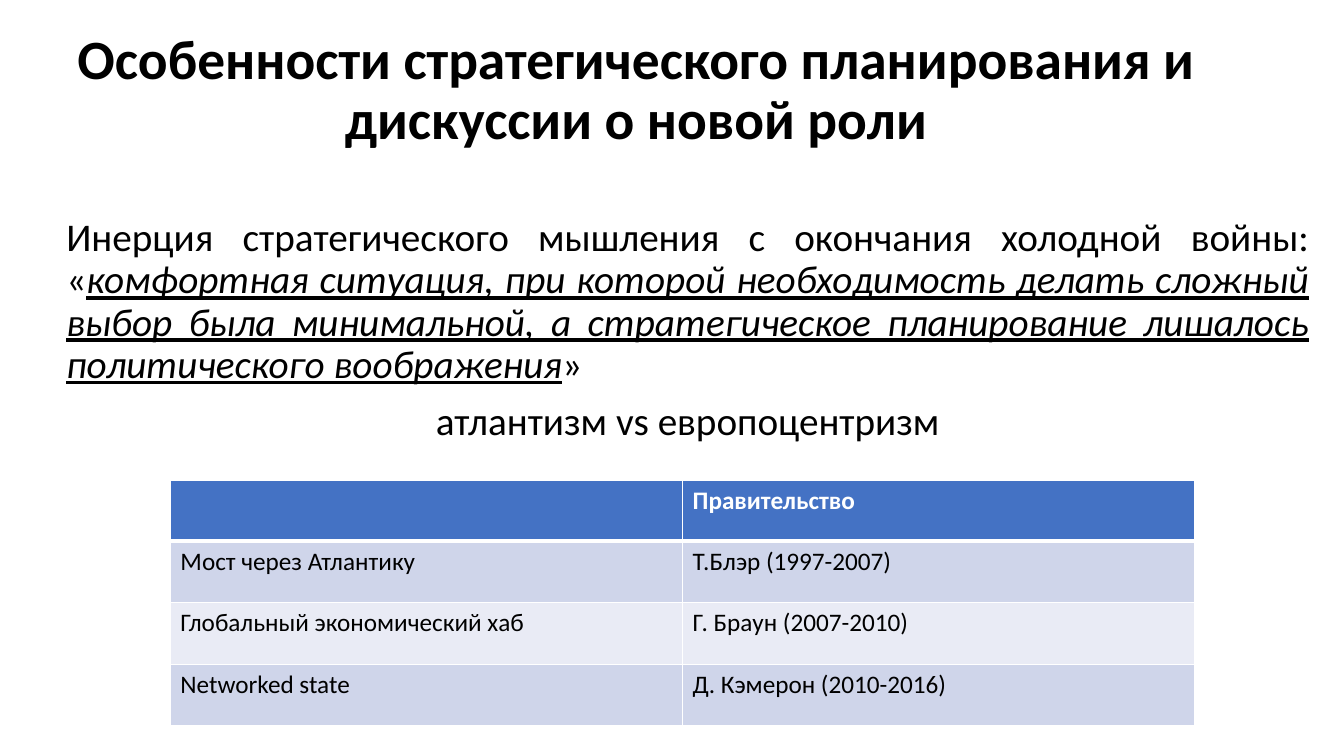
from dataclasses import dataclass

import pptx
import pptx.dml.color
import pptx.enum.text
import pptx.oxml
import pptx.oxml.ns
import pptx.util
from pptx.util import Inches

ALIGN = pptx.enum.text.PP_ALIGN
ANCHOR = pptx.enum.text.MSO_ANCHOR


@dataclass(frozen=True)
class Theme:
    font: str = "Calibri"
    ink: str = "000000"
    paper: str = "FFFFFF"
    header: str = "4472C4"
    odd_band: str = "CFD5EA"
    even_band: str = "E9EBF5"
    title_size: float = 39.6
    body_size: float = 28
    table_size: float = 18


THEME = Theme()

GOVERNMENTS = [
    ("", "Правительство"),
    ("Мост через Атлантику", "Т.Блэр (1997-2007)"),
    ("Глобальный экономический хаб", "Г. Браун (2007-2010)"),
    ("Networked state", "Д. Кэмерон (2010-2016)"),
]


def rgb(value):
    return pptx.dml.color.RGBColor.from_string(value)


def write(paragraph, text, size, color=THEME.ink, bold=False, italic=False,
          underline=False, align=ALIGN.LEFT, line_spacing=1.0, before=0):
    paragraph.alignment = align
    paragraph.line_spacing = line_spacing
    paragraph.space_before = pptx.util.Pt(before)
    run = paragraph.add_run()
    run.text = text
    font = run.font
    font.name = THEME.font
    font.size = pptx.util.Pt(size)
    font.color.rgb = rgb(color)
    font.bold, font.italic, font.underline = bold, italic, underline


def place_title(slide, text):
    title = slide.shapes.title
    title.left, title.top = Inches(0.36), Inches(0.32)
    title.width, title.height = Inches(11.9), Inches(1.17)
    frame = title.text_frame
    frame.word_wrap = True
    frame.auto_size = pptx.enum.text.MSO_AUTO_SIZE.NONE
    frame.vertical_anchor = ANCHOR.MIDDLE
    write(frame.paragraphs[0], text, THEME.title_size, bold=True,
          align=ALIGN.CENTER, line_spacing=0.9)


def add_thesis(slide):
    thesis = slide.shapes.add_textbox(
        Inches(0.56), Inches(1.49), Inches(12.52), Inches(6.18))
    frame = thesis.text_frame
    frame.word_wrap = True
    frame.margin_top = Inches(0.67)
    inertia = frame.paragraphs[0]
    quote = ("комфортная ситуация, при которой необходимость делать сложный "
             "выбор была минимальной, а стратегическое планирование лишалось "
             "политического воображения")
    for text, quoted in [
        ("Инерция стратегического мышления с окончания холодной войны: «", False),
        (quote, True),
        ("»", False),
    ]:
        write(inertia, text, THEME.body_size, italic=quoted, underline=quoted,
              align=ALIGN.JUSTIFY, line_spacing=0.9)
    write(frame.add_paragraph(), "атлантизм vs европоцентризм",
          THEME.body_size, align=ALIGN.CENTER, line_spacing=0.9, before=10)


def set_borders(cell, widths):
    properties = cell._tc.get_or_add_tcPr()
    for position, (side, points) in enumerate(widths.items()):
        properties.insert(position, pptx.oxml.parse_xml(
            f'<a:{side} {pptx.oxml.ns.nsdecls("a")} w="{pptx.util.Pt(points)}">'
            f'<a:solidFill><a:srgbClr val="{THEME.paper}"/></a:solidFill>'
            f'</a:{side}>'))


def add_government_table(slide, rows):
    table = slide.shapes.add_table(
        len(rows), 2, Inches(1.69), Inches(4.77),
        Inches(10.16), Inches(2.42)).table
    for row_index, row in enumerate(rows):
        is_header = row_index == 0
        table.rows[row_index].height = Inches(0.6 if is_header else 0.61)
        band = THEME.odd_band if row_index % 2 else THEME.even_band
        for column_index, text in enumerate(row):
            cell = table.cell(row_index, column_index)
            cell.fill.solid()
            cell.fill.fore_color.rgb = rgb(THEME.header if is_header else band)
            set_borders(cell, {"lnL": 1, "lnR": 1,
                               "lnT": 3 if row_index == 1 else 1,
                               "lnB": 3 if is_header else 1})
            if text:
                write(cell.text_frame.paragraphs[0], text, THEME.table_size,
                      color=THEME.paper if is_header else THEME.ink,
                      bold=is_header)


def main():
    presentation = pptx.Presentation()
    presentation.slide_width = Inches(13.33)
    presentation.slide_height = Inches(7.5)
    slide = presentation.slides.add_slide(presentation.slide_layouts[5])
    place_title(
        slide,
        "Особенности стратегического планирования и дискуссии о новой роли")
    add_thesis(slide)
    add_government_table(slide, GOVERNMENTS)
    presentation.save("out.pptx")


if __name__ == "__main__":
    main()
